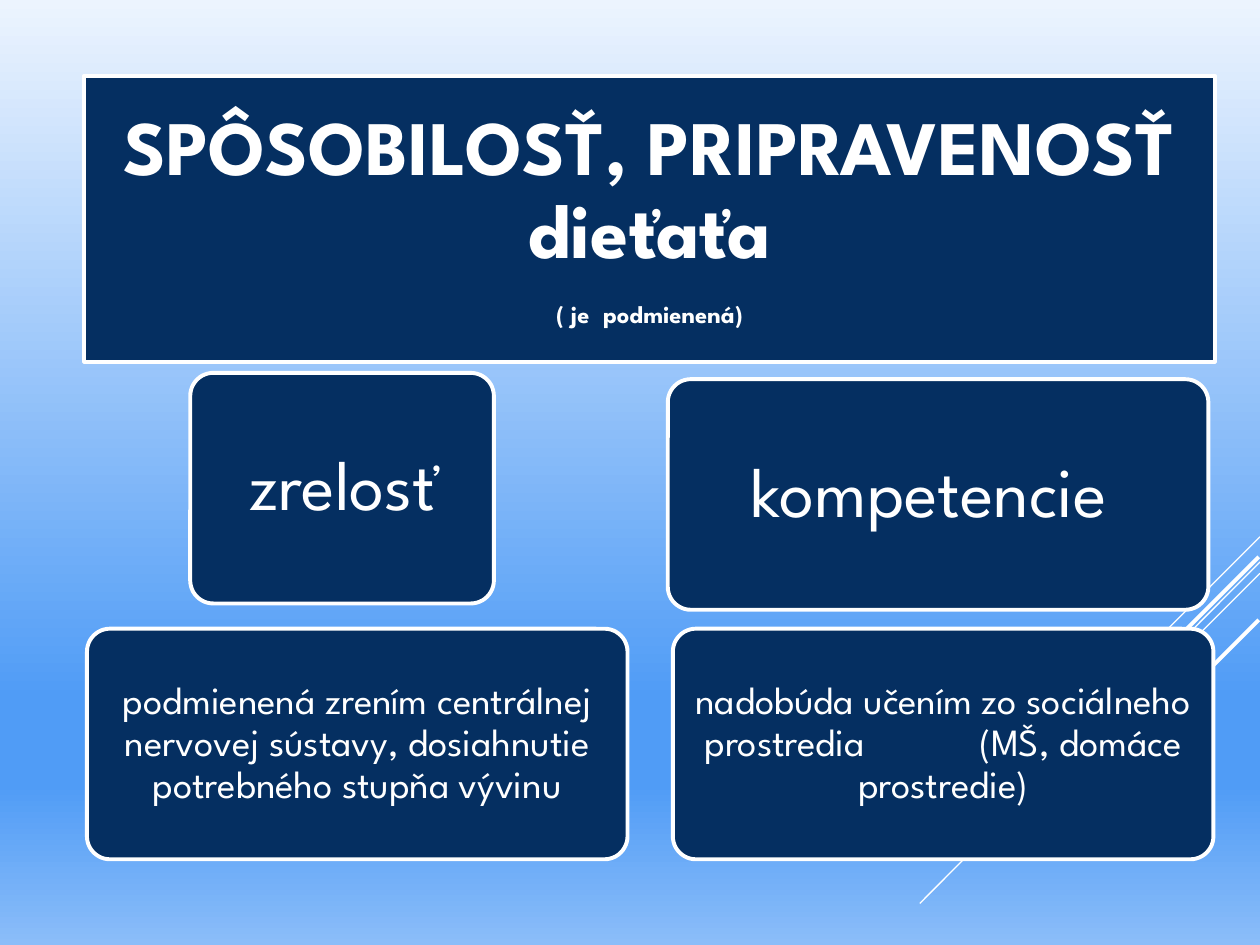
from copy import deepcopy

from lxml.etree import SubElement
from pptx import Presentation
from pptx.dml.color import RGBColor
from pptx.enum.shapes import MSO_CONNECTOR as Connector, MSO_SHAPE as Shape
from pptx.enum.text import MSO_ANCHOR as Anchor, MSO_AUTO_SIZE as AutoSize, PP_ALIGN as Align
from pptx.oxml.ns import qn
from pptx.util import Inches, Pt

FONT = "League Spartan"
NAVY = "052F61"
WHITE = "FFFFFF"
SKY = [(0, "ECF4FE"), (74, "509CF6"), (83, "509CF6"), (100, "8BBDF9")]
RAYS = [
    (10, 4.26, 9.17, 5.09, 0.75),
    (10, 4.46, 7.3, 7.17, 0.75),
    (10, 4.55, 8.28, 6.27, 0.75),
    (9.99, 4.42, 8.42, 5.99, 2.25),
    (9.99, 4.92, 8.85, 6.06, 2.25),
]
HEADING = [
    ([("SPÔSOBILOSŤ, PRIPRAVENOSŤ dieťaťa", 0)], 44),
    ([("( je", 0), (" ", 4), ("podmienená", 0), (")", 16)], 14),
]
MATURITY = "podmienená zrením centrálnej nervovej sústavy, dosiahnutie potrebného stupňa vývinu"
CARDS = [
    (1.51, 2.96, 2.41, [("zrelosť", 0)], 40, 0.17),
    (0.69, 4.99, 4.29, [(MATURITY, 0)], 22, 0.09),
    (5.3, 3.01, 4.29, [("kompetencie ", 0)], 40, 0.17),
    (5.34, 4.99, 4.29, [("nadobúda učením zo sociálneho prostredia", 0), (" ", 60),
                        ("(MŠ, domáce prostredie)", 0)], 22, 0.09),
]


def color(value):
    return RGBColor.from_string(value)


def paint_background(page):
    fill = page.background.fill
    fill.gradient()
    fill.gradient_angle = 270
    stop_list = next(page.element.iter(qn("a:gsLst")))
    while len(stop_list) < len(SKY):
        stop_list.append(deepcopy(stop_list[0]))
    for stop, (position, value) in zip(fill.gradient_stops, SKY):
        stop.position = position / 100
        stop.color.rgb = color(value)


def add_ray(page, left, top, right, bottom, width):
    ray = page.shapes.add_connector(
        Connector.STRAIGHT, Inches(left), Inches(top), Inches(right), Inches(bottom))
    ray.line.color.rgb = color(WHITE)
    ray.line.width = Pt(width)
    SubElement(ray._element.spPr, qn("a:effectLst"))


def style_box(box):
    box.fill.solid()
    box.fill.fore_color.rgb = color(NAVY)
    box.line.color.rgb = color(WHITE)
    box.line.width = Pt(2.25)
    box.shadow.inherit = False


def write_spans(para, pieces, size, bold):
    para.alignment = Align.CENTER
    para.line_spacing = 0.9
    para.space_after = Pt(0)
    after = para._p.pPr.find(qn("a:spcAft"))
    after.clear()
    SubElement(after, qn("a:spcPct"), val="35000")
    for text, tracking in pieces:
        span = para.add_run()
        span.text = text
        span.font.name = FONT
        span.font.size = Pt(size)
        span.font.bold = bold
        span.font.color.rgb = color(WHITE)
        if tracking:
            span.font._element.set("spc", str(tracking * 100))


def write_text(box, paragraphs, inset, bold=False):
    frame = box.text_frame
    frame.word_wrap = True
    frame.auto_size = AutoSize.NONE
    frame.vertical_anchor = Anchor.MIDDLE
    frame.margin_left = frame.margin_right = Inches(inset)
    frame.margin_top = frame.margin_bottom = Inches(inset)
    for index, (pieces, size) in enumerate(paragraphs):
        para = frame.add_paragraph() if index else frame.paragraphs[0]
        write_spans(para, pieces, size, bold)


def format_heading(page):
    box = page.shapes.title
    box.left, box.top = Inches(0.67), Inches(0.6)
    box.width, box.height = Inches(8.97), Inches(2.27)
    geometry = SubElement(box._element.spPr, qn("a:prstGeom"), prst="roundRect")
    guides = SubElement(geometry, qn("a:avLst"))
    SubElement(guides, qn("a:gd"), name="adj", fmla="val 10000")
    style_box(box)
    write_text(box, HEADING, 0.18, bold=True)


def add_card(page, left, top, width, pieces, size, inset):
    box = page.shapes.add_shape(
        Shape.ROUNDED_RECTANGLE, Inches(left), Inches(top), Inches(width), Inches(1.83))
    box.adjustments[0] = 0.1
    style_box(box)
    write_text(box, [(pieces, size)], inset)


def main():
    deck = Presentation()
    deck.slide_width, deck.slide_height = Inches(10), Inches(7.5)
    page = deck.slides.add_slide(deck.slide_layouts[5])
    paint_background(page)
    format_heading(page)
    for ray in RAYS:
        add_ray(page, *ray)
    for card in CARDS:
        add_card(page, *card)
    deck.save("out.pptx")


if __name__ == "__main__":
    main()
